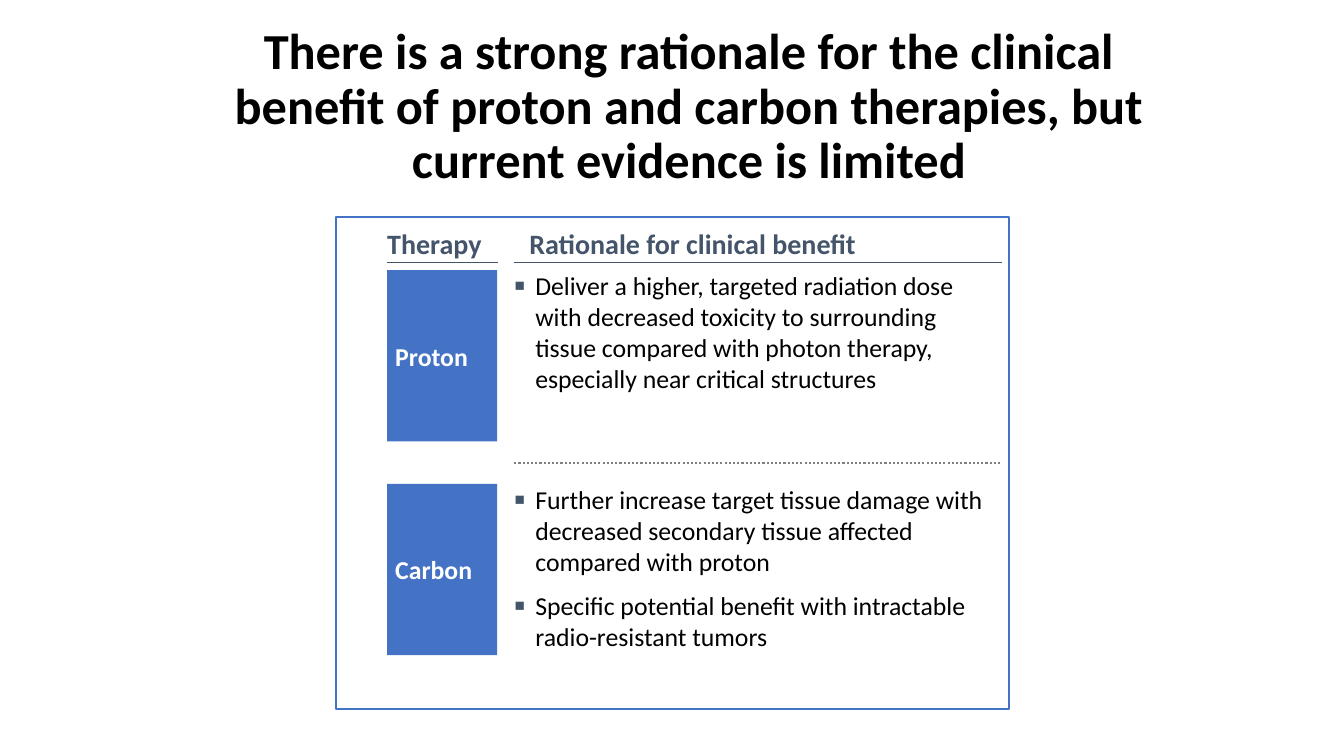
from dataclasses import dataclass

from lxml import etree
from pptx import Presentation
from pptx.dml.color import RGBColor
from pptx.enum.dml import MSO_LINE
from pptx.enum.shapes import MSO_CONNECTOR, MSO_SHAPE
from pptx.enum.text import MSO_ANCHOR, MSO_AUTO_SIZE, PP_ALIGN
from pptx.oxml.ns import qn
from pptx.util import Inches, Pt

RECT = MSO_SHAPE.RECTANGLE
LINE = MSO_CONNECTOR.STRAIGHT
DOTS = MSO_LINE.ROUND_DOT
TOP, MIDDLE, BOTTOM = MSO_ANCHOR.TOP, MSO_ANCHOR.MIDDLE, MSO_ANCHOR.BOTTOM
LEFT, CENTER = PP_ALIGN.LEFT, PP_ALIGN.CENTER
NO_FIT = MSO_AUTO_SIZE.NONE

COLORS = {"black": "000000", "white": "FFFFFF", "blue": "4472C4",
          "slate": "44546A", "gray": "808080"}
FONT = "Calibri"
BODY = 18.4
TAG_X, LIST_X = 3.84, 5.1
TAG_W, LIST_W = 1.09, 4.83
HEAD_Y, RULE_Y = 2.24, 2.6
ROW_Y, ROW_STEP, ROW_H = 2.68, 2.12, 1.7


@dataclass
class Row:
    name: str
    points: list[str]
    height: float


@dataclass
class Head:
    text: str
    left: float
    width: float


@dataclass
class Rule:
    left: float
    right: float
    y: float
    color: str
    weight: float
    dotted: bool = False


ROWS = [
    Row("Proton", ["Deliver a higher, targeted radiation dose with decreased toxicity "
                   "to surrounding tissue compared with photon therapy, especially "
                   "near critical structures"], 1.26),
    Row("Carbon", ["Further increase target tissue damage with decreased secondary "
                   "tissue affected compared with proton",
                   "Specific potential benefit with intractable radio-resistant "
                   "tumors"], 1.74),
]
HEADS = [Head("Therapy", TAG_X, TAG_W),
         Head("Rationale for clinical benefit", 5.25, LIST_W)]
RULES = [Rule(TAG_X, 4.94, RULE_Y, "slate", 0.5),
         Rule(LIST_X, 9.94, RULE_Y, "slate", 0.5),
         Rule(LIST_X, 9.94, 4.59, "gray", 1.5, True)]


def rgb(name: str) -> RGBColor:
    return RGBColor.from_string(COLORS[name])


def place(shape, left: float, top: float, width: float, height: float) -> None:
    shape.left, shape.top = Inches(left), Inches(top)
    shape.width, shape.height = Inches(width), Inches(height)


def style(shape, size: float, color: str, bold: bool, anchor=TOP,
          align=LEFT, pad: float = 0) -> None:
    frame = shape.text_frame
    frame.word_wrap = True
    frame.auto_size = NO_FIT
    frame.vertical_anchor = anchor
    frame.margin_left = frame.margin_right = Inches(pad)
    frame.margin_top = frame.margin_bottom = Inches(pad)
    for para in frame.paragraphs:
        para.alignment = align
        para.space_before = Pt(0)
        for run in para.runs:
            font = run.font
            font.name, font.size, font.bold = FONT, Pt(size), bold
            font.color.rgb = rgb(color)


def indent(para, left: float, first: float) -> None:
    props = para._p.get_or_add_pPr()
    props.set("marL", str(Inches(left)))
    props.set("indent", str(Inches(first)))


def bullet(para) -> None:
    indent(para, 0.21, -0.21)
    props = para._p.get_or_add_pPr()
    tint = etree.SubElement(props, qn("a:buClr"))
    etree.SubElement(tint, qn("a:srgbClr"), val=COLORS["slate"])
    etree.SubElement(props, qn("a:buSzPct"), val="125000")
    etree.SubElement(props, qn("a:buFont"), typeface=FONT)
    etree.SubElement(props, qn("a:buChar"), char="▪")


def draw_title(shape) -> None:
    place(shape, 1.8, 0.26, 9.62, 1.64)
    shape.text_frame.text = ("There is a strong rationale for the clinical benefit of "
                             "proton and carbon therapies, but current evidence is limited")
    style(shape, 36, "black", True, align=CENTER)
    para = shape.text_frame.paragraphs[0]
    para.line_spacing = 0.9
    indent(para, 0.45, 0)


def draw_box(slide, left: float, top: float, width: float, height: float, fill: str):
    box = slide.shapes.add_shape(RECT, Inches(left), Inches(top),
                                 Inches(width), Inches(height))
    box.shadow.inherit = False
    box.fill.solid()
    box.fill.fore_color.rgb = rgb(fill)
    box.line.fill.background()
    return box


def draw_panel(slide) -> None:
    panel = draw_box(slide, 3.33, 2.15, 6.68, 4.88, "white")
    panel.line.color.rgb = rgb("blue")
    panel.line.width = Pt(1.5)
    # Behind the placeholders
    slide.shapes.element.insert(2, panel.element)


def draw_row(slide, row: Row, top: float, body) -> None:
    tag = draw_box(slide, TAG_X, top, TAG_W, ROW_H, "blue")
    tag.text_frame.text = row.name
    style(tag, BODY, "white", True, MIDDLE, pad=0.08)

    place(body, LIST_X, top, LIST_W, row.height)
    body.text_frame.text = "\n".join(row.points)
    style(body, BODY, "black", False)
    for num, para in enumerate(body.text_frame.paragraphs):
        para.level = 1
        para.space_before = Pt(9.5 if num else 0)
        bullet(para)


def draw_head(slide, head: Head) -> None:
    box = slide.shapes.add_textbox(Inches(head.left), Inches(HEAD_Y),
                                   Inches(head.width), Inches(RULE_Y - HEAD_Y))
    box.text_frame.text = head.text
    style(box, 20, "slate", True, BOTTOM)
    box.text_frame.margin_bottom = Inches(0.02)


def draw_rule(slide, rule: Rule) -> None:
    line = slide.shapes.add_connector(LINE, Inches(rule.left), Inches(rule.y),
                                      Inches(rule.right), Inches(rule.y))
    line.line.color.rgb = rgb(rule.color)
    line.line.width = Pt(rule.weight)
    if rule.dotted:
        line.line.dash_style = DOTS
    etree.SubElement(line.element.spPr, qn("a:effectLst"))


def main() -> None:
    deck = Presentation()
    deck.slide_width, deck.slide_height = Inches(13.33), Inches(7.5)
    # Layout with a title and two lists
    slide = deck.slides.add_slide(deck.slide_layouts[3])
    title, *bodies = slide.placeholders

    # Title and panel
    draw_title(title)
    draw_panel(slide)

    # Therapy rows
    for num, (row, body) in enumerate(zip(ROWS, bodies)):
        draw_row(slide, row, ROW_Y + num * ROW_STEP, body)

    # Column heads and rules
    for head in HEADS:
        draw_head(slide, head)
    for rule in RULES:
        draw_rule(slide, rule)

    deck.save("out.pptx")


if __name__ == "__main__":
    main()
